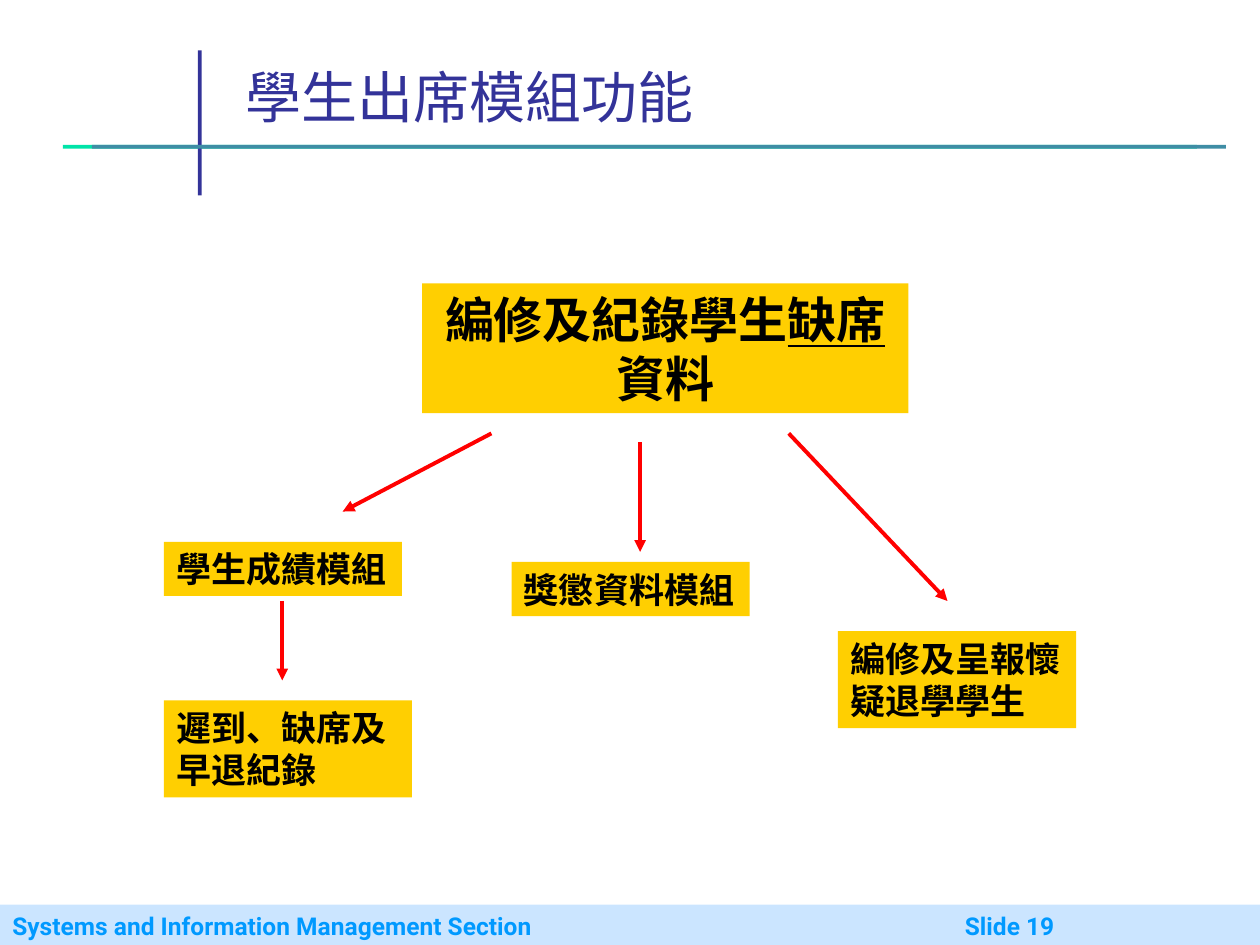
from dataclasses import dataclass

from lxml.etree import SubElement
from pptx import Presentation
from pptx.dml.color import RGBColor
from pptx.enum.shapes import MSO_CONNECTOR, MSO_SHAPE
from pptx.enum.text import MSO_ANCHOR, MSO_AUTO_SIZE, PP_ALIGN
from pptx.oxml.ns import qn
from pptx.shapes.autoshape import Shape
from pptx.slide import Slide
from pptx.util import Inches, Pt

COLORS = {
    "title": "333399",
    "mint": "00E4A8",
    "teal": "3F8DA5",
    "footer": "99CCFF",
    "footer_text": "0099FF",
    "box": "FFCF01",
    "box_text": "000000",
    "arrow": "FF0000",
}


@dataclass
class Area:
    left: float
    top: float
    width: float
    height: float


@dataclass
class Span:
    text: str
    underline: bool = False


@dataclass
class Label:
    area: Area
    spans: list[Span]
    size: int = 20
    align: PP_ALIGN = PP_ALIGN.LEFT
    fill: str = "box"
    color: str = "box_text"


@dataclass
class Arrow:
    start: tuple[float, float]
    end: tuple[float, float]


RULES = [
    (Area(0.5, 1.15, 9, 0.03), "mint"),
    (Area(1.57, 0.4, 0.03, 1.15), "title"),
    (Area(0.73, 1.15, 9, 0.03), "teal"),
]
FOOTER = Label(
    Area(0, 7.18, 10, 0.34),
    [Span("Systems and Information Management Section\tSlide 19")],
    size=14, fill="footer", color="footer_text",
)
MODULES = [
    Label(Area(3.35, 2.25, 3.86, 1.03),
          [Span("編修及紀錄學生"), Span("缺席", underline=True), Span("資料")],
          size=28, align=PP_ALIGN.CENTER),
    Label(Area(1.3, 4.3, 1.89, 0.43), [Span("學生成績模組")]),
    Label(Area(1.3, 5.56, 1.97, 0.77), [Span("遲到、缺席及早退紀錄")]),
    Label(Area(6.65, 5.01, 1.89, 0.77), [Span("編修及呈報懷疑退學學生")]),
    Label(Area(4.06, 4.46, 1.89, 0.43), [Span("獎懲資料模組")]),
]
ARROWS = [
    Arrow((3.9, 3.44), (2.72, 4.06)),
    Arrow((2.24, 4.77), (2.24, 5.4)),
    Arrow((6.26, 3.44), (7.52, 4.77)),
    Arrow((5.08, 3.51), (5.08, 4.38)),
]


def rgb(name: str) -> RGBColor:
    return RGBColor.from_string(COLORS[name])


def add_rectangle(page: Slide, area: Area, fill: str) -> Shape:
    box = page.shapes.add_shape(
        MSO_SHAPE.RECTANGLE, Inches(area.left), Inches(area.top),
        Inches(area.width), Inches(area.height))
    box.shadow.inherit = False
    box.fill.solid()
    box.fill.fore_color.rgb = rgb(fill)
    box.line.fill.background()
    return box


def add_label(page: Slide, label: Label) -> Shape:
    box = add_rectangle(page, label.area, label.fill)
    frame = box.text_frame
    frame.word_wrap = True
    frame.auto_size = MSO_AUTO_SIZE.SHAPE_TO_FIT_TEXT
    frame.vertical_anchor = MSO_ANCHOR.TOP
    para = frame.paragraphs[0]
    para.alignment = label.align
    for span in label.spans:
        run = para.add_run()
        run.text = span.text
        run.font.name = "Roboto"
        run.font.size = Pt(label.size)
        run.font.bold = True
        run.font.underline = span.underline
        run.font.color.rgb = rgb(label.color)
    return box


def add_footer(page: Slide) -> None:
    """Draw the half-transparent band, its slide number set by a tab stop."""
    box = add_label(page, FOOTER)
    color = box.fill._xPr.find(qn("a:solidFill"))[0]
    SubElement(color, qn("a:alpha"), val="50000")
    properties = box.text_frame.paragraphs[0]._p.get_or_add_pPr()
    tabs = SubElement(properties, qn("a:tabLst"))
    SubElement(tabs, qn("a:tab"), pos=str(Inches(7.56)), algn="l")


def add_arrow(page: Slide, arrow: Arrow) -> None:
    points = [Inches(value) for value in (*arrow.start, *arrow.end)]
    connector = page.shapes.add_connector(MSO_CONNECTOR.STRAIGHT, *points)
    connector.line.color.rgb = rgb("arrow")
    connector.line.width = Pt(2.25)
    SubElement(connector.line._get_or_add_ln(), qn("a:tailEnd"), type="triangle")
    SubElement(connector._element.spPr, qn("a:effectLst"))


def set_title(page: Slide, text: str) -> None:
    title = page.shapes.title
    title.left, title.top = Inches(1.85), Inches(0.25)
    title.width, title.height = Inches(7.83), Inches(0.83)
    frame = title.text_frame
    frame.auto_size = MSO_AUTO_SIZE.NONE
    frame.vertical_anchor = MSO_ANCHOR.BOTTOM
    para = frame.paragraphs[0]
    para.alignment = PP_ALIGN.LEFT
    run = para.add_run()
    run.text = text
    run.font.name = "Arial"
    run.font.size = Pt(32)
    run.font.color.rgb = rgb("title")


def main() -> None:
    deck = Presentation()
    deck.slide_width, deck.slide_height = Inches(10), Inches(7.5)
    page = deck.slides.add_slide(deck.slide_layouts.get_by_name("Title Only"))
    for area, fill in RULES:
        add_rectangle(page, area, fill)
    add_footer(page)
    set_title(page, "學生出席模組功能")
    for label in MODULES:
        add_label(page, label)
    for arrow in ARROWS:
        add_arrow(page, arrow)
    deck.save("out.pptx")


if __name__ == "__main__":
    main()
